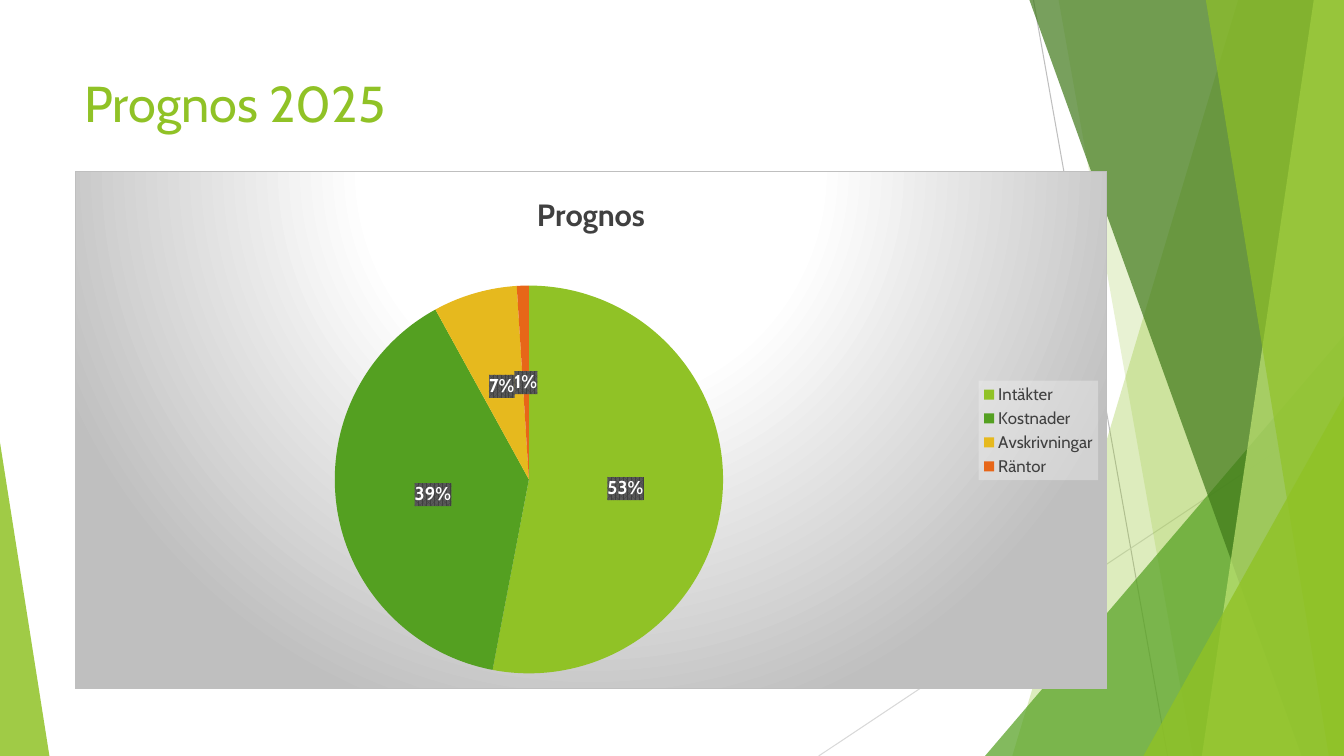
from dataclasses import dataclass

from lxml import etree
from pptx import Presentation
from pptx.chart.data import CategoryChartData
from pptx.dml.color import RGBColor
from pptx.enum.chart import XL_CHART_TYPE, XL_LABEL_POSITION as LABEL_POS, XL_LEGEND_POSITION as LEGEND_POS
from pptx.enum.shapes import MSO_CONNECTOR, MSO_SHAPE
from pptx.enum.text import MSO_ANCHOR
from pptx.oxml import parse_xml
from pptx.oxml.ns import nsdecls, qn
from pptx.util import Emu, Pt

PX = 9144  # 100 px to the inch
WIDTH, HEIGHT = 1333, 750
FONT = "Cabin"

LIME = RGBColor(0x90, 0xC2, 0x26)
GREEN = RGBColor(0x54, 0xA0, 0x21)
DARK_GREEN = RGBColor(0x3F, 0x78, 0x19)
PALE_LIME = RGBColor(0xC0, 0xE4, 0x74)
GOLD = RGBColor(0xE6, 0xB9, 0x1E)
ORANGE = RGBColor(0xE7, 0x66, 0x18)
WHITE = RGBColor(0xFF, 0xFF, 0xFF)
TEXT_GREY = RGBColor(0x40, 0x40, 0x40)
MID_GREY = RGBColor(0xBF, 0xBF, 0xBF)
LIGHT_GREY = RGBColor(0xD9, 0xD9, 0xD9)


@dataclass(frozen=True)
class Ray:
    start: tuple[int, int]
    end: tuple[int, int]
    color: RGBColor


@dataclass(frozen=True)
class Band:
    """Full-height band that runs to the right edge of the slide."""
    top_left: int
    bottom_left: int
    color: RGBColor
    opacity: int


@dataclass(frozen=True)
class Wedge:
    """Triangle standing on the bottom edge of the slide."""
    left: int
    top: int
    width: int
    apex: int
    color: RGBColor
    opacity: int


@dataclass(frozen=True)
class Slice:
    name: str
    value: int
    color: RGBColor


RAYS = [
    Ray((1025, 0), (1158, HEIGHT), MID_GREY),
    Ray((WIDTH, 403), (812, HEIGHT), LIGHT_GREY),
]
# From back to front
FACETS = [
    Band(1228, 1004, LIME, 30),
    Band(1050, 1183, LIME, 20),
    Wedge(977, 333, 356, 1, GREEN, 72),
    Band(1021, 1291, DARK_GREEN, 70),
    Band(1303, 1192, PALE_LIME, 70),
    Band(1196, 1318, LIME, 65),
    Wedge(1134, 393, 199, 1, LIME, 80),
    Wedge(0, 439, 49, 0, LIME, 85),
]
SLICES = [
    Slice("Intäkter", 53, LIME),
    Slice("Kostnader", 39, GREEN),
    Slice("Avskrivningar", 7, GOLD),
    Slice("Räntor", 1, ORANGE),
]

CHART_FILL = (
    '<a:gradFill><a:gsLst><a:gs pos="0"><a:srgbClr val="FFFFFF"/></a:gs>'
    '<a:gs pos="39000"><a:srgbClr val="FFFFFF"/></a:gs>'
    '<a:gs pos="100000"><a:srgbClr val="BFBFBF"/></a:gs></a:gsLst>'
    '<a:path path="circle"><a:fillToRect l="50000" t="-80000" r="50000" b="180000"/></a:path>'
    '</a:gradFill><a:ln w="9525"><a:solidFill><a:srgbClr val="BFBFBF"/></a:solidFill></a:ln>'
)
LABEL_FILL = (
    '<a:pattFill prst="pct75"><a:fgClr><a:srgbClr val="404040"/></a:fgClr>'
    '<a:bgClr><a:srgbClr val="595959"/></a:bgClr></a:pattFill>'
)
LEGEND_FILL = '<a:solidFill><a:srgbClr val="F2F2F2"><a:alpha val="39000"/></a:srgbClr></a:solidFill>'
PLOT_LAYOUT = (
    f'<c:layout {nsdecls("c")}><c:manualLayout><c:layoutTarget val="inner"/>'
    '<c:xMode val="edge"/><c:yMode val="edge"/><c:x val="0.25"/><c:y val="0.22"/>'
    '<c:w val="0.38"/><c:h val="0.75"/></c:manualLayout></c:layout>'
)


def px(n: int) -> Emu:
    return Emu(n * PX)


def draw_ray(shapes, ray: Ray) -> None:
    line = shapes.add_connector(MSO_CONNECTOR.STRAIGHT, *map(px, ray.start + ray.end))
    line.line.color.rgb = ray.color
    line.line.width = Pt(0.75)
    etree.SubElement(line._element.spPr, qn("a:effectLst"))


def draw_facet(shapes, facet: Band | Wedge) -> None:
    if isinstance(facet, Band):
        builder = shapes.build_freeform(facet.top_left, 0, scale=PX)
        builder.add_line_segments([(WIDTH, 0), (WIDTH, HEIGHT), (facet.bottom_left, HEIGHT)])
        sp = builder.convert_to_shape()
    else:
        sp = shapes.add_shape(MSO_SHAPE.ISOSCELES_TRIANGLE, px(facet.left), px(facet.top),
                              px(facet.width), px(HEIGHT - facet.top))
        sp.adjustments[0] = facet.apex
    sp.shadow.inherit = False
    sp.line.fill.background()
    sp.fill.solid()
    sp.fill.fore_color.rgb = facet.color
    color = sp._element.spPr.find(f"{qn('a:solidFill')}/{qn('a:srgbClr')}")
    etree.SubElement(color, qn("a:alpha")).set("val", str(facet.opacity * 1000))


def style_font(font, size: float, color: RGBColor, bold: bool = False) -> None:
    font.name = FONT
    font.size = Pt(size)
    font.bold = bold
    font.color.rgb = color


def fill_chart_part(chart, text_path: str, fill: str) -> None:
    """Put shape properties in front of the text properties of a chart part."""
    text_props = chart.element.xpath(text_path)[0]
    text_props.addprevious(parse_xml(f'<c:spPr {nsdecls("c", "a")}>{fill}</c:spPr>'))


def draw_title(shapes) -> None:
    box = shapes.add_textbox(px(74), px(67), px(940), px(144))
    tf = box.text_frame
    tf.word_wrap = True
    tf.vertical_anchor = MSO_ANCHOR.TOP
    tf.text = "Prognos 2025"
    style_font(tf.paragraphs[0].runs[0].font, 36, LIME)


def draw_pie(shapes) -> None:
    data = CategoryChartData()
    data.categories = [s.name for s in SLICES]
    data.add_series("Prognos", [s.value for s in SLICES])
    chart = shapes.add_chart(XL_CHART_TYPE.PIE, px(74), px(170), px(1024), px(514), data).chart
    style_font(chart.font, 10, TEXT_GREY)
    fill_chart_part(chart, "c:txPr", CHART_FILL)

    # Title and legend
    chart.has_title = True
    tf = chart.chart_title.text_frame
    tf.text = "Prognos"
    style_font(tf.paragraphs[0].runs[0].font, 22, TEXT_GREY, bold=True)
    chart.has_legend = True
    chart.legend.position = LEGEND_POS.RIGHT
    chart.legend.include_in_layout = False
    style_font(chart.legend.font, 12, TEXT_GREY)
    fill_chart_part(chart, "c:chart/c:legend/c:txPr", LEGEND_FILL)

    # Plot area and slices
    plot_area = chart.element.xpath("c:chart/c:plotArea")[0]
    for layout in plot_area.findall(qn("c:layout")):
        plot_area.remove(layout)
    plot_area.insert(0, parse_xml(PLOT_LAYOUT))
    plot = chart.plots[0]
    plot.vary_by_categories = True
    series = plot.series[0]
    for i, part in enumerate(SLICES):
        fill = series.points[i].format.fill
        fill.solid()
        fill.fore_color.rgb = part.color

    # Percentage labels
    labels = series.data_labels
    labels.show_value = False
    labels.show_percentage = True
    labels.number_format = "0%"
    labels.number_format_is_linked = False
    labels.position = LABEL_POS.CENTER
    style_font(labels.font, 13.3, WHITE, bold=True)
    fill_chart_part(chart, "c:chart//c:ser/c:dLbls/c:txPr", LABEL_FILL)


def main() -> None:
    prs = Presentation()
    prs.slide_width, prs.slide_height = px(WIDTH), px(HEIGHT)
    shapes = prs.slides.add_slide(prs.slide_layouts[6]).shapes
    for ray in RAYS:
        draw_ray(shapes, ray)
    for facet in FACETS:
        draw_facet(shapes, facet)
    draw_title(shapes)
    draw_pie(shapes)
    prs.save("out.pptx")


if __name__ == "__main__":
    main()
